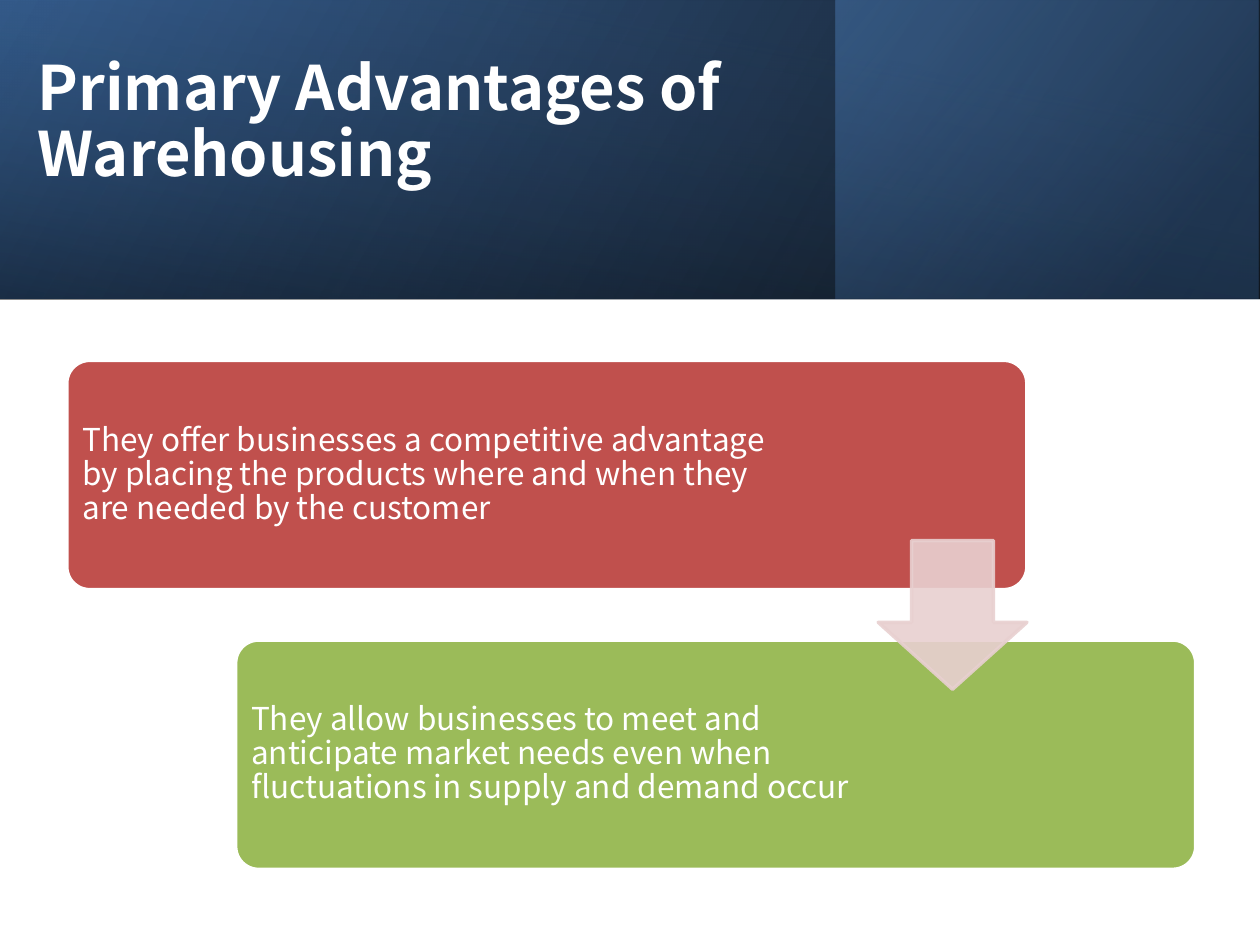
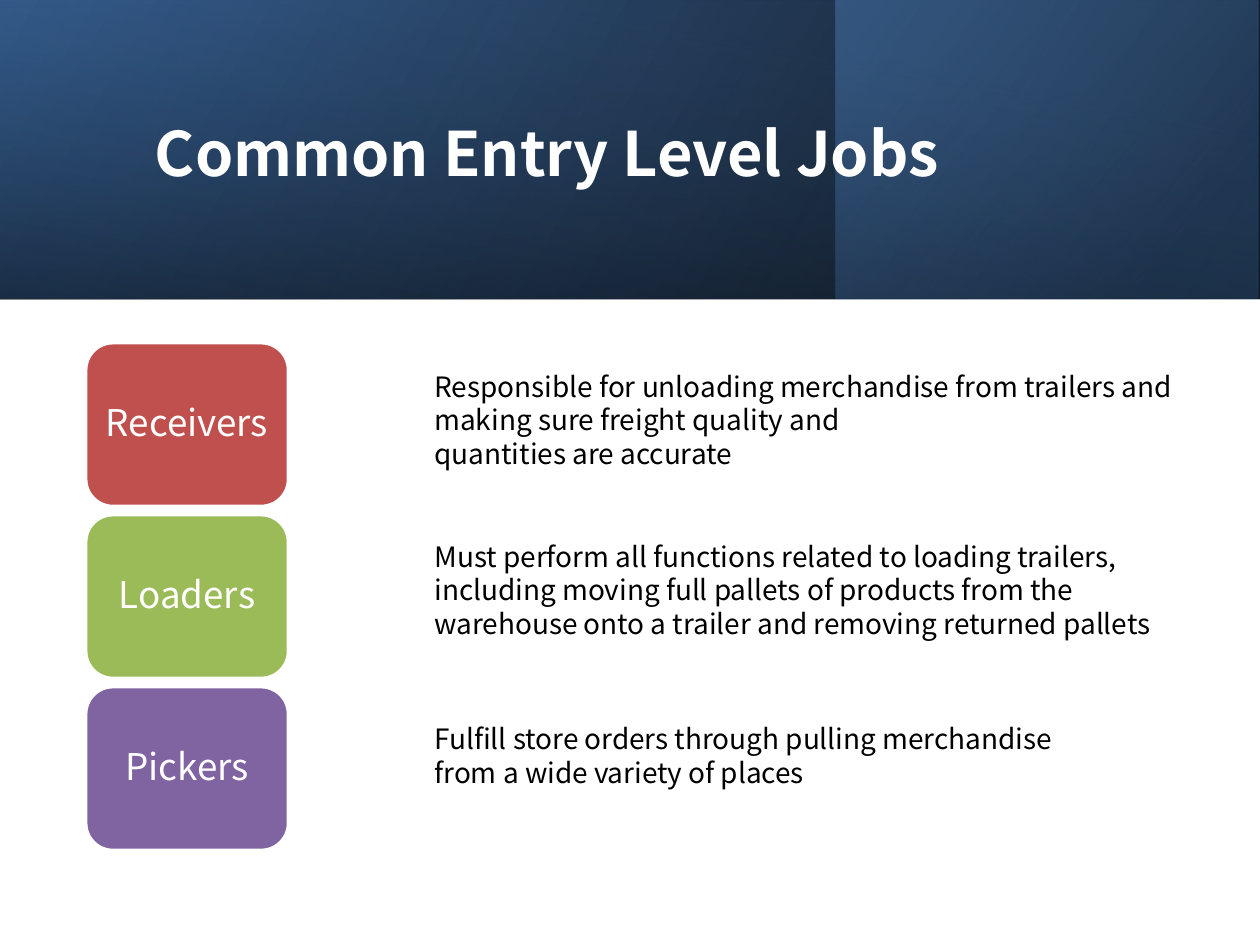
from pptx import Presentation
from pptx.dml.color import RGBColor
from pptx.enum.shapes import MSO_SHAPE
from pptx.enum.text import MSO_ANCHOR, MSO_AUTO_SIZE, PP_ALIGN
from pptx.oxml import parse_xml
from pptx.oxml.ns import nsdecls, qn
from pptx.util import Inches, Pt

RECTANGLE = MSO_SHAPE.RECTANGLE
ROUNDED = MSO_SHAPE.ROUNDED_RECTANGLE
DOWN_ARROW = MSO_SHAPE.DOWN_ARROW
MIDDLE = MSO_ANCHOR.MIDDLE
LEFT, CENTER = PP_ALIGN.LEFT, PP_ALIGN.CENTER
NO_FIT = MSO_AUTO_SIZE.NONE

FONT = "Noto Sans CJK KR"
WHITE, BLACK = "FFFFFF", "000000"
RED, GREEN, PURPLE, PINK = "C0504D", "9BBB59", "8064A2", "E8D0D0"

# Header bands: left, top, width, height, rotation, angle,
# then gradient stops as position, colour, opacity (all in percent)
BANDS = [
    (0, 0, 10, 2.37, 0, 330, [(0, BLACK, 96), (100, "376092", 100)]),
    (6.63, 0, 3.36, 2.37, 0, 320, [(19, "254061", 68), (100, "4F81BD", 48)]),
    (3.81, -3.81, 2.37, 10, 270, 350, [(23, "376092", 16), (99, BLACK, 45)]),
]


def add_block(page, kind, place, color, line_color=None):
    """Add a preset shape with a solid fill and a 2 pt outline, if any."""
    block = page.shapes.add_shape(kind, *[Inches(length) for length in place])
    block.shadow.inherit = False
    block.fill.solid()
    block.fill.fore_color.rgb = RGBColor.from_string(color)
    if line_color:
        block.line.color.rgb = RGBColor.from_string(line_color)
        block.line.width = Pt(2)
    else:
        block.line.fill.background()
    return block


def write(box, lines, size, color, align=LEFT, spacing=None, bold=False):
    """Write one paragraph per line into a box."""
    frame = box.text_frame
    frame.word_wrap = True
    for index, line in enumerate(lines):
        para = frame.add_paragraph() if index else frame.paragraphs[0]
        para.alignment = align
        para.line_spacing = spacing
        span = para.add_run()
        span.text = line
        span.font.name = FONT
        span.font.size = Pt(size)
        span.font.bold = bold
        span.font.color.rgb = RGBColor.from_string(color)


deck = Presentation()
deck.slide_width, deck.slide_height = Inches(10), Inches(7.5)

# Both pages: title over the header bands
pages = []
for heading, left, top in [("Primary Advantages of Warehousing", 0.2, 0.12),
                           ("Common Entry Level Jobs", 1.13, 0.38)]:
    page = deck.slides.add_slide(deck.slide_layouts[5])
    pages.append(page)
    title = page.shapes.title
    title.left, title.top = Inches(left), Inches(top)
    title.width, title.height = Inches(7.97), Inches(1.72)
    title.text_frame.auto_size = NO_FIT
    title.text_frame.vertical_anchor = MIDDLE
    write(title, [heading], 35, WHITE, spacing=0.9, bold=True)

    for *place, rotation, angle, stops in BANDS:
        band = add_block(page, RECTANGLE, place, WHITE)
        band.rotation = rotation
        properties = band.element.spPr
        properties.find(qn("a:xfrm")).set("flipH", "1")
        stop_xml = "".join(
            f'<a:gs pos="{position * 1000}"><a:srgbClr val="{color}">'
            f'<a:alpha val="{opacity * 1000}"/></a:srgbClr></a:gs>'
            for position, color, opacity in stops)
        gradient = parse_xml(
            f'<a:gradFill {nsdecls("a")} rotWithShape="1"><a:gsLst>{stop_xml}</a:gsLst>'
            f'<a:lin ang="{angle * 60000}" scaled="0"/></a:gradFill>')
        properties.replace(properties.find(qn("a:solidFill")), gradient)
        title.element.addprevious(band.element)

advantages_page, jobs_page = pages

# Advantages: two staggered cards, text kept clear of the arrow
ADVANTAGES = [
    (0.53, 2.86, RED, 1.85, "They offer businesses a competitive advantage by placing "
     "the products where and when they are needed by the customer"),
    (1.87, 5.08, GREEN, 2.59, "They allow businesses to meet and anticipate market needs "
     "even when fluctuations in supply and demand occur"),
]
for left, top, color, right_margin, advantage in ADVANTAGES:
    card = add_block(advantages_page, ROUNDED, (left, top, 7.62, 1.82), color, WHITE)
    card.adjustments[0] = 0.1
    frame = card.text_frame
    frame.vertical_anchor = MIDDLE
    frame.margin_left = frame.margin_top = frame.margin_bottom = Inches(0.07)
    frame.margin_right = Inches(right_margin)
    write(card, [advantage], 18, WHITE, spacing=0.9)

# Translucent arrow from the first card to the second
arrow = add_block(advantages_page, DOWN_ARROW, (6.97, 4.29, 1.18, 1.18), PINK, PINK)
arrow.adjustments[0], arrow.adjustments[1] = 0.45, 0.55
for color_element in arrow.element.spPr.iter(qn("a:srgbClr")):
    color_element.append(parse_xml(f'<a:alpha {nsdecls("a")} val="90000"/>'))

# Jobs: a column of names, each with its duties beside it
JOBS = [
    ("Receivers", RED, (3.35, 2.88, 6.06, 0.91),
     ["Responsible for unloading merchandise from trailers and making sure "
      "freight quality and",
      "quantities are accurate"]),
    ("Loaders", GREEN, (3.35, 4.23, 5.94, 0.91),
     ["Must perform all functions related to loading trailers,",
      "including moving full pallets of products from the",
      "warehouse onto a trailer and removing returned pallets"]),
    ("Pickers", PURPLE, (3.35, 5.68, 5.59, 0.64),
     ["Fulfill store orders through pulling merchandise from a wide variety of places"]),
]
for row, (job, color, duty_place, duties) in enumerate(JOBS):
    card = add_block(jobs_page, ROUNDED, (0.68, 2.72 + row * 1.365, 1.61, 1.3), color, WHITE)
    frame = card.text_frame
    frame.vertical_anchor = MIDDLE
    frame.margin_left = frame.margin_right = Inches(0.09)
    frame.margin_top = frame.margin_bottom = Inches(0.04)
    write(card, [job], 21, WHITE, CENTER, 0.9)

    duty_box = jobs_page.shapes.add_textbox(*[Inches(length) for length in duty_place])
    write(duty_box, duties, 16, BLACK)

# The arrow's head takes 45% of its height, its shaft 55% of its width
arrow.adjustments[0], arrow.adjustments[1] = 0.55, 0.45

deck.save("out.pptx")
